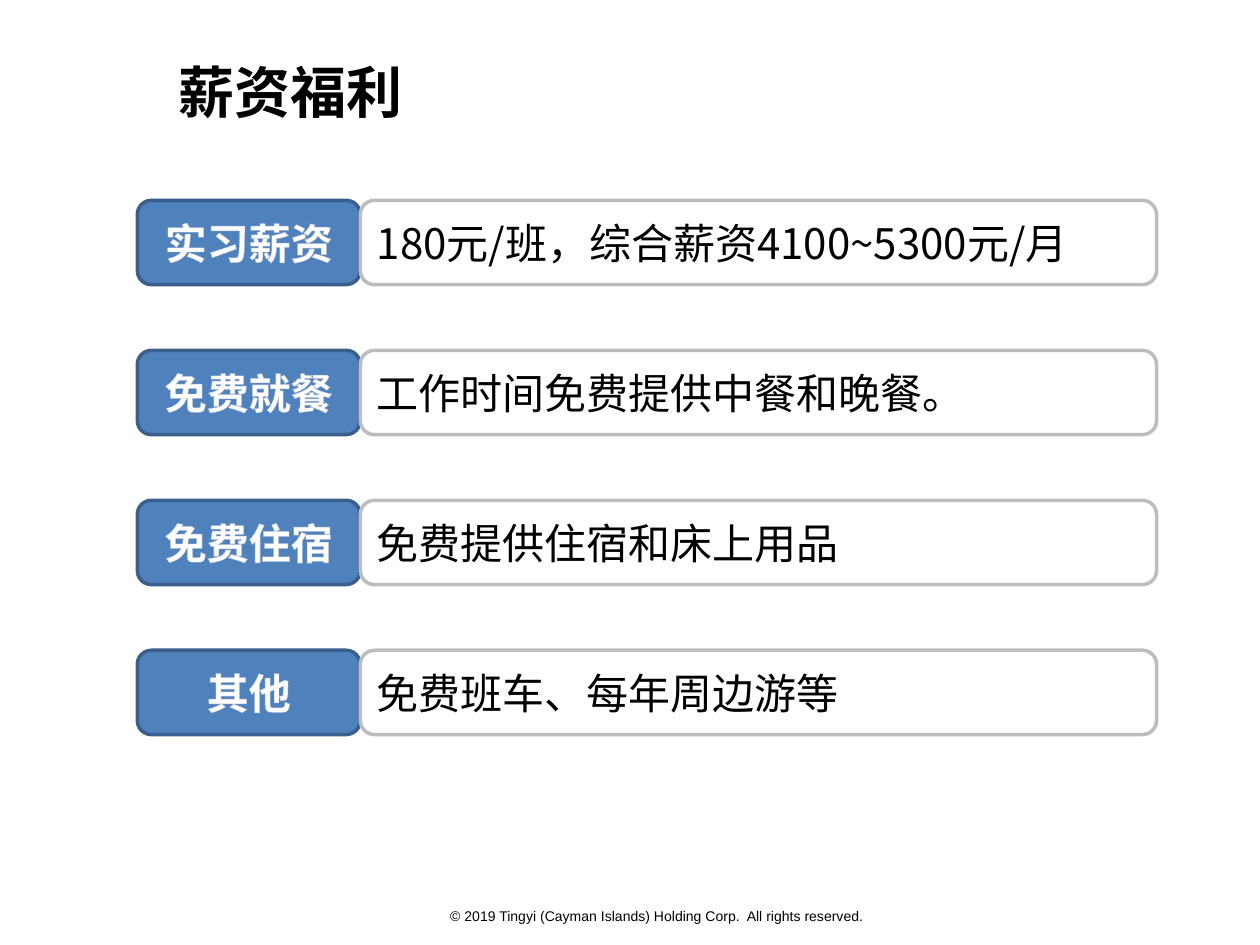
from lxml.etree import SubElement
from pptx import Presentation
from pptx.dml.color import RGBColor
from pptx.enum.shapes import MSO_SHAPE as Shape
from pptx.enum.text import MSO_ANCHOR as Anchor, MSO_AUTO_SIZE as Fit, PP_ALIGN as Align
from pptx.oxml.ns import qn
from pptx.util import Pt

FONT = "Noto Sans CJK SC"
ROWS = [
    ("实习薪资", "180元/班，综合薪资4100~5300元/月"),
    ("免费就餐", "工作时间免费提供中餐和晚餐。"),
    ("免费住宿", "免费提供住宿和床上用品"),
    ("其他", "免费班车、每年周边游等"),
]
LEFT, TOP, STEP = 78.5, 114.5, 85.7
LABEL, DETAIL, HIGH = 127.4, 455, 48.2


def color(code):
    return RGBColor.from_string(code)


def write(frame, text, size, face, ink="000000", bold=False,
          align=Align.LEFT, anchor=Anchor.MIDDLE):
    frame.word_wrap = True
    frame.auto_size = Fit.NONE
    frame.vertical_anchor = anchor
    para = frame.paragraphs[0]
    para.alignment = align
    run = para.add_run()
    run.text = text
    font = run.font
    font.size, font.name, font.bold = Pt(size), face, bold
    font.color.rgb = color(ink)
    SubElement(run._r.get_or_add_rPr(), qn("a:ea"), typeface=face)
    return run


def edge(run, code, width):
    """Outline the letters of a run."""
    line = run._r.get_or_add_rPr().makeelement(qn("a:ln"), w=str(Pt(width)))
    fill = SubElement(line, qn("a:solidFill"))
    SubElement(fill, qn("a:srgbClr"), val=code)
    run._r.get_or_add_rPr().insert(0, line)


def box(slide, left, top, width, fill, line):
    shape = slide.shapes.add_shape(
        Shape.ROUNDED_RECTANGLE, Pt(left), Pt(top), Pt(width), Pt(HIGH))
    shape.shadow.inherit = False
    shape.fill.solid()
    shape.fill.fore_color.rgb = color(fill)
    shape.line.color.rgb = color(line)
    shape.line.width = Pt(2)
    return shape.text_frame


def row(slide, top, name, detail):
    frame = box(slide, LEFT, top, LABEL, "4F81BD", "3A5F8C")
    run = write(frame, name, 24, FONT, "FFFFFF", True, Align.CENTER)
    edge(run, "B2C1DB", 0.8)
    frame = box(slide, LEFT + LABEL, top, DETAIL, "FFFFFF", "BDBDBD")
    frame.margin_right = 0
    write(frame, detail, 24, FONT)


def head(slide, text):
    title = slide.shapes.title
    title.left, title.top = Pt(95), Pt(29.5)
    title.width, title.height = Pt(308), Pt(58.3)
    write(title.text_frame, text, 32, "Noto Sans CJK JP", bold=True,
          anchor=Anchor.TOP)


def foot(slide, text):
    area = slide.shapes.add_textbox(Pt(150.5), Pt(504.7), Pt(450), Pt(37.4))
    write(area.text_frame, text, 8, "Arial", align=Align.CENTER)


def main():
    deck = Presentation()
    deck.slide_width, deck.slide_height = Pt(720), Pt(540)
    slide = deck.slides.add_slide(deck.slide_layouts[5])
    foot(slide, "© 2019 Tingyi (Cayman Islands) Holding Corp.  All rights reserved.")
    head(slide, "薪资福利")
    for i, (name, detail) in enumerate(ROWS):
        row(slide, TOP + i * STEP, name, detail)
    deck.save("out.pptx")


if __name__ == "__main__":
    main()
